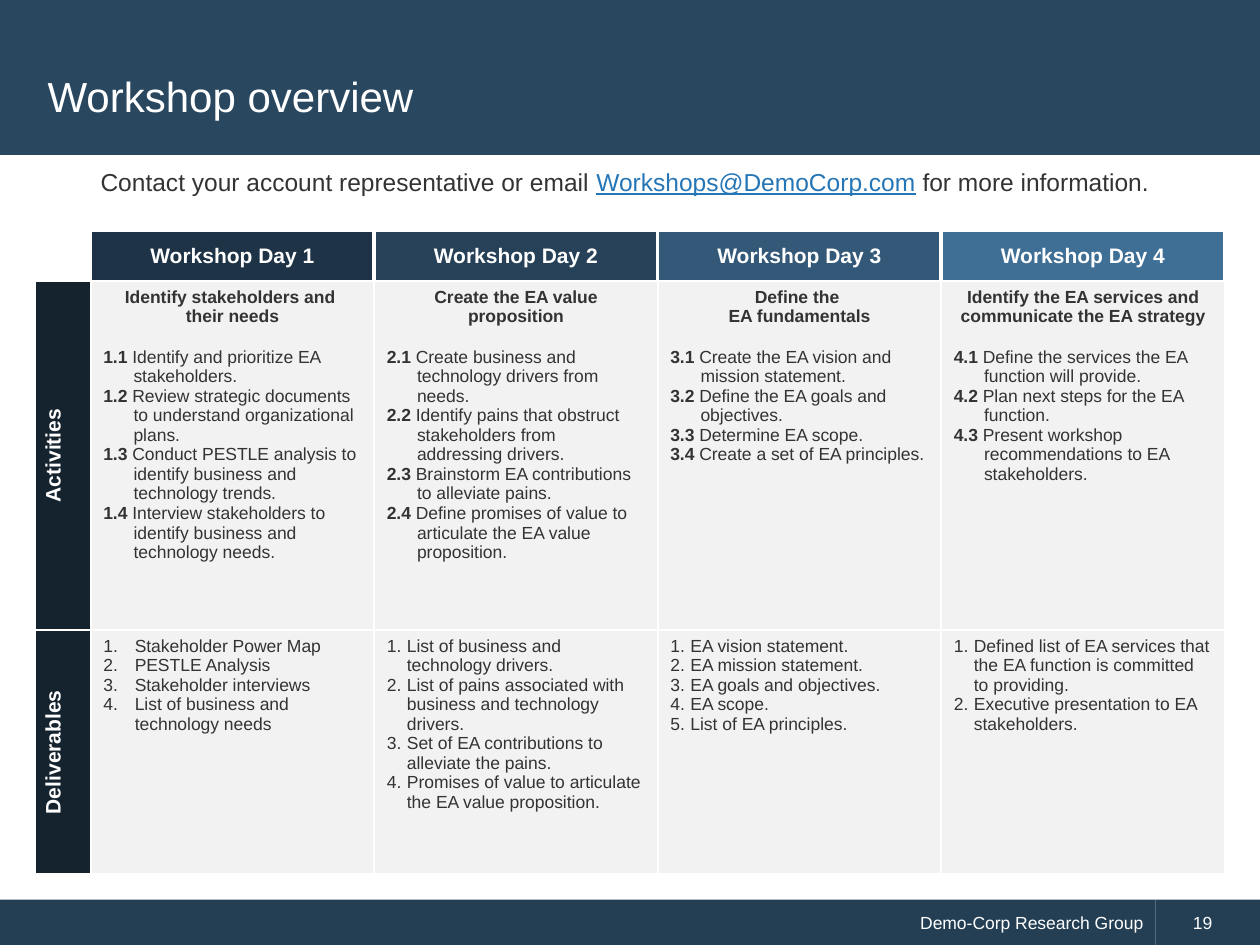
from dataclasses import dataclass

from lxml import etree
from pptx import Presentation
from pptx.dml.color import RGBColor
from pptx.enum.shapes import MSO_SHAPE
from pptx.enum.text import MSO_ANCHOR, PP_ALIGN
from pptx.oxml.ns import qn
from pptx.util import Inches, Pt

RECT = MSO_SHAPE.RECTANGLE
MID, TOP = MSO_ANCHOR.MIDDLE, MSO_ANCHOR.TOP
LEFT, MIDDLE, RIGHT = PP_ALIGN.LEFT, PP_ALIGN.CENTER, PP_ALIGN.RIGHT
WHITE, INK, LINK = "FFFFFF", "333333", "2576B7"
SIDE, PALE, BAND, FOOT = "15232F", "F2F2F2", "29475F", "243F54"


@dataclass
class Day:
    fill: str
    goal: str
    tasks: list[str]
    goods: list[str]
    hang: float = 0.16


DAYS = [
    Day("1E3346", "Identify stakeholders and \ntheir needs",
        ["Identify and prioritize EA stakeholders.",
         "Review strategic documents to understand organizational plans.",
         "Conduct PESTLE analysis to identify business and technology trends.",
         "Interview stakeholders to identify business and technology needs."],
        ["Stakeholder Power Map", "PESTLE Analysis", "Stakeholder interviews",
         "List of business and technology needs"], hang=0.25),
    Day("264158", "Create the EA value proposition",
        ["Create business and technology drivers from needs.",
         "Identify pains that obstruct stakeholders from addressing drivers.",
         "Brainstorm EA contributions to alleviate pains.",
         "Define promises of value to articulate the EA value proposition."],
        ["List of business and technology drivers.",
         "List of pains associated with business and technology drivers.",
         "Set of EA contributions to alleviate the pains.",
         "Promises of value to articulate the EA value proposition."]),
    Day("345978", "Define the \nEA fundamentals",
        ["Create the EA vision and mission statement.",
         "Define the EA goals and objectives.",
         "Determine EA scope.",
         "Create a set of EA principles."],
        ["EA vision statement.", "EA mission statement.",
         "EA goals and objectives.", "EA scope.", "List of EA principles."]),
    Day("406F96", "Identify the EA services and communicate the EA strategy",
        ["Define the services the EA function will provide.",
         "Plan next steps for the EA function.",
         "Present workshop recommendations to EA stakeholders."],
        ["Defined list of EA services that the EA function is committed to providing.",
         "Executive presentation to EA stakeholders."]),
]


def color(code: str) -> RGBColor:
    return RGBColor.from_string(code)


def write(frame, text: str, *, size=10, ink=INK, bold=False, line=False,
          align=LEFT, after=0, left=0.0, hang=0.0, number=False, para=None):
    """Add text in a new paragraph, or as one more run of para."""
    if para is None:
        last = frame.paragraphs[-1]
        para = frame.add_paragraph() if last.runs else last
        para.alignment = align
        para.space_after = Pt(after)
        props = para._p.get_or_add_pPr()
        props.set("marL", str(Inches(left)))
        props.set("indent", str(Inches(-hang)))
        if number:
            etree.SubElement(props, qn("a:buFont"), typeface="+mj-lt")
            etree.SubElement(props, qn("a:buAutoNum"), type="arabicPeriod")
    for i, part in enumerate(text.split("\n")):
        if i:
            para.add_line_break()
        run = para.add_run()
        run.text = part
        font = run.font
        font.name, font.size = "Arial", Pt(size)
        font.bold, font.underline = bold, line
        font.color.rgb = color(ink)
    return para


def box(slide, x: float, y: float, w: float, h: float, fill: str):
    shape = slide.shapes.add_shape(RECT, Inches(x), Inches(y), Inches(w), Inches(h))
    shape.shadow.inherit = False
    shape.fill.solid()
    shape.fill.fore_color.rgb = color(fill)
    shape.line.fill.background()
    shape.text_frame.vertical_anchor = MID
    return shape.text_frame


def label(slide, x: float, y: float, w: float, h: float):
    frame = slide.shapes.add_textbox(
        Inches(x), Inches(y), Inches(w), Inches(h)).text_frame
    frame.word_wrap = True
    frame.vertical_anchor = MID
    return frame


def style(cell, fill: str | None, anchor=TOP, side=1.5):
    """Set white borders, fill and anchor; return the cell's text frame."""
    props = cell._tc.get_or_add_tcPr()
    for tag, width in (("lnL", side), ("lnR", side), ("lnT", 1.5), ("lnB", 1.5)):
        edge = etree.SubElement(props, qn(f"a:{tag}"), w=str(Pt(width)))
        paint = etree.SubElement(edge, qn("a:solidFill"))
        etree.SubElement(paint, qn("a:srgbClr"), val=WHITE)
    if fill:
        cell.fill.solid()
        cell.fill.fore_color.rgb = color(fill)
    else:
        cell.fill.background()
    cell.vertical_anchor = anchor
    return cell.text_frame


def plan(slide):
    """Draw the table of days, activities and deliverables."""
    widths, heights = [0.44] + [2.25] * len(DAYS), [0.3, 2.77, 1.94]
    table = slide.shapes.add_table(
        len(heights), len(widths), Inches(0.28), Inches(1.83),
        Inches(sum(widths)), Inches(sum(heights))).table
    table.first_row = table.horz_banding = False
    for col, width in zip(table.columns, widths):
        col.width = Inches(width)
    for row, height in zip(table.rows, heights):
        row.height = Inches(height)

    style(table.cell(0, 0), None)
    for r, name in enumerate(("Activities", "Deliverables"), 1):
        cell = table.cell(r, 0)
        frame = style(cell, SIDE, MID)
        cell._tc.get_or_add_tcPr().set("vert", "vert270")
        write(frame, name, size=12, ink=WHITE, bold=True, align=MIDDLE, after=5)

    for c, day in enumerate(DAYS, 1):
        head = style(table.cell(0, c), day.fill, MID, 2.25)
        write(head, f"Workshop Day {c}", size=12, ink=WHITE, bold=True, align=MIDDLE)
        body = style(table.cell(1, c), PALE)
        write(body, day.goal, bold=True, align=MIDDLE, after=12)
        for n, task in enumerate(day.tasks, 1):
            para = write(body, f"{c}.{n} ", bold=True, left=0.24, hang=0.24)
            write(body, task, para=para)
        goods = style(table.cell(2, c), PALE)
        for item in day.goods:
            write(goods, item, left=day.hang, hang=day.hang, number=True)


def main():
    deck = Presentation()
    deck.slide_width, deck.slide_height = Inches(10), Inches(7.5)
    slide = deck.slides.add_slide(deck.slide_layouts[6])

    foot = box(slide, 0, 7.14, 9.17, 0.37, FOOT)
    write(foot, "Demo-Corp Research Group", ink=WHITE, align=RIGHT)
    page = box(slide, 9.17, 7.14, 0.83, 0.37, FOOT)
    write(page, "19", ink=WHITE, left=0.2)
    box(slide, 0, 0, 10, 1.23, BAND)
    write(label(slide, 0.28, 0.28, 9.43, 0.96), "Workshop overview",
          size=24, ink=WHITE)

    note = label(slide, 0.7, 1.25, 8.97, 0.38)
    para = write(note, "Contact your account representative or email ", size=14)
    write(note, "Workshops@DemoCorp.com", size=14, ink=LINK, line=True, para=para)
    write(note, " for more information.", size=14, para=para)

    plan(slide)
    deck.save("out.pptx")


if __name__ == "__main__":
    main()
